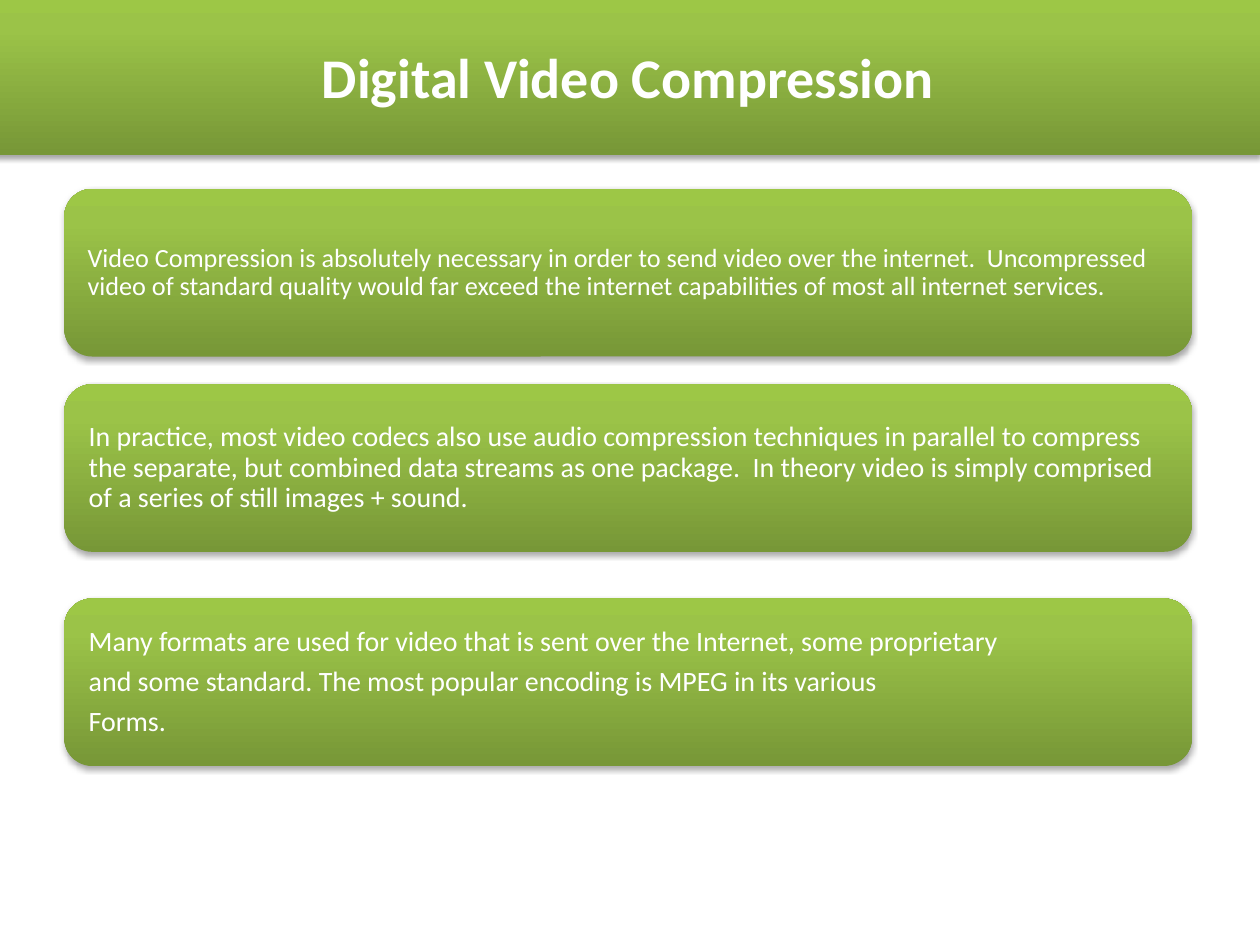
from copy import deepcopy

from lxml import etree
from pptx import Presentation
from pptx.dml.color import RGBColor
from pptx.enum.shapes import MSO_SHAPE
from pptx.enum.text import MSO_ANCHOR, MSO_AUTO_SIZE, PP_ALIGN
from pptx.oxml.ns import qn
from pptx.util import Inches, Pt

ROUNDED = MSO_SHAPE.ROUNDED_RECTANGLE
MIDDLE = MSO_ANCHOR.MIDDLE
NO_FIT = MSO_AUTO_SIZE.NONE
LEFT, CENTER = PP_ALIGN.LEFT, PP_ALIGN.CENTER
TITLE_ONLY = 5
FONT = "Calibri"
COLORS = {"dark": "779737", "mid": "9BC348", "light": "9DC746",
          "text": "FFFFFF", "shadow": "000000"}
GRADIENT = [(0, "dark"), (0.8, "mid"), (1, "light")]

BANNER = (-0.03, -0.02, 10.03, 1.25)
CARD_LEFT, CARD_WIDTH, CARD_HEIGHT = 0.51, 8.95, 1.33
CARDS = [
    (1.5, 15, 0.12, [
        "Video Compression is absolutely necessary in order to send video over the "
        "internet.  Uncompressed video of standard quality would far exceed the "
        "internet capabilities of most all internet services."]),
    (3.05, 16, 0.13, [
        "In practice, most video codecs also use audio compression techniques in "
        "parallel to compress the separate, but combined data streams as one "
        "package.  In theory video is simply comprised of a series of still "
        "images + sound."]),
    (4.75, 16, 0.13, [
        "Many formats are used for video that is sent over the Internet, some proprietary",
        "and some standard. The most popular encoding is MPEG in its various",
        "Forms."]),
]


def place(shape, box):
    """Move and size a shape to a box in inches."""
    shape.left, shape.top, shape.width, shape.height = map(Inches, box)


def paint(shape):
    """Give a shape the green gradient, no outline and a soft shadow below."""
    fill = shape.fill
    fill.gradient()
    fill.gradient_angle = 90
    stop_list = shape._element.spPr.find(".//" + qn("a:gsLst"))
    stop_list.append(deepcopy(stop_list[-1]))
    for stop, (position, color) in zip(fill.gradient_stops, GRADIENT):
        stop.position = position
        stop.color.rgb = RGBColor.from_string(COLORS[color])
    shape.line.fill.background()
    shape.shadow.inherit = False
    effects = shape._element.spPr.find(qn("a:effectLst"))
    shadow = etree.SubElement(effects, qn("a:outerShdw"), blurRad=str(Pt(3.1)),
                              dist=str(Pt(1.8)), dir="5400000", rotWithShape="0")
    color = etree.SubElement(shadow, qn("a:srgbClr"), val=COLORS["shadow"])
    etree.SubElement(color, qn("a:alpha"), val="35000")


def write(para, text, size, align, bold=False):
    """Add one run of white text to a paragraph."""
    para.alignment = align
    span = para.add_run()
    span.text = text
    span.font.name = FONT
    span.font.size = Pt(size)
    span.font.bold = bold
    span.font.color.rgb = RGBColor.from_string(COLORS["text"])


def add_banner(page, box, text):
    """Turn the title placeholder into the banner."""
    title = page.shapes.title
    place(title, box)
    paint(title)
    frame = title.text_frame
    frame.auto_size = NO_FIT
    frame.vertical_anchor = MIDDLE
    write(frame.paragraphs[0], text, 32, CENTER, bold=True)


def add_card(page, box, size, inset, lines):
    """Add a rounded card with left-aligned paragraphs."""
    card = page.shapes.add_shape(ROUNDED, *map(Inches, box))
    paint(card)
    frame = card.text_frame
    frame.word_wrap = True
    frame.vertical_anchor = MIDDLE
    frame.margin_left = frame.margin_right = Inches(inset)
    frame.margin_top = frame.margin_bottom = Inches(inset)
    for index, line in enumerate(lines):
        para = frame.add_paragraph() if index else frame.paragraphs[0]
        para.line_spacing = 0.9
        para.space_after = Pt(0.35 * size)
        write(para, line, size, LEFT)


def main():
    """Build the slide and save the deck."""
    deck = Presentation()
    deck.slide_width, deck.slide_height = Inches(10), Inches(7.5)
    page = deck.slides.add_slide(deck.slide_layouts[TITLE_ONLY])
    add_banner(page, BANNER, "Digital Video Compression")
    for top, size, inset, lines in CARDS:
        add_card(page, (CARD_LEFT, top, CARD_WIDTH, CARD_HEIGHT), size, inset, lines)
    deck.save("out.pptx")


if __name__ == "__main__":
    main()
